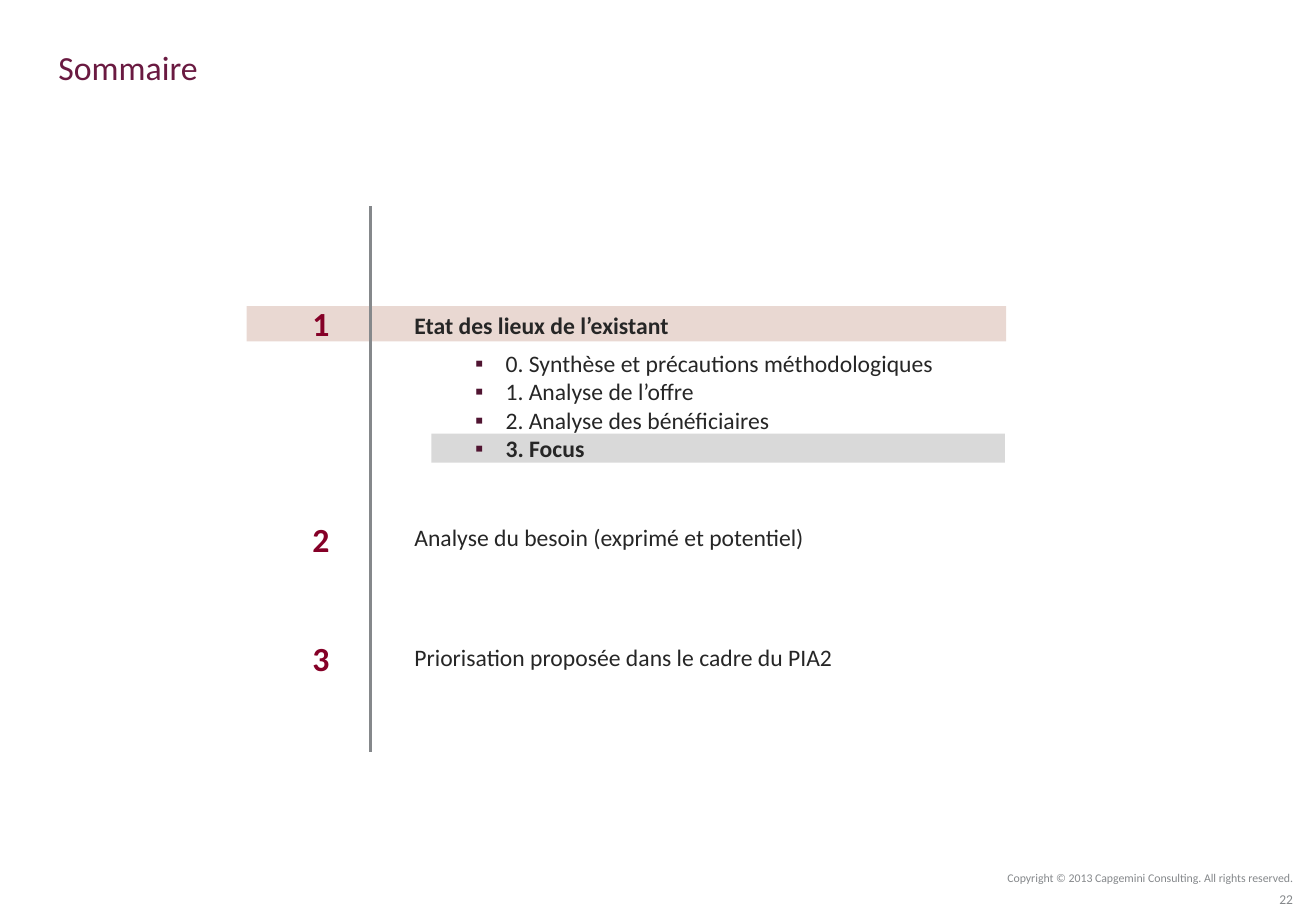
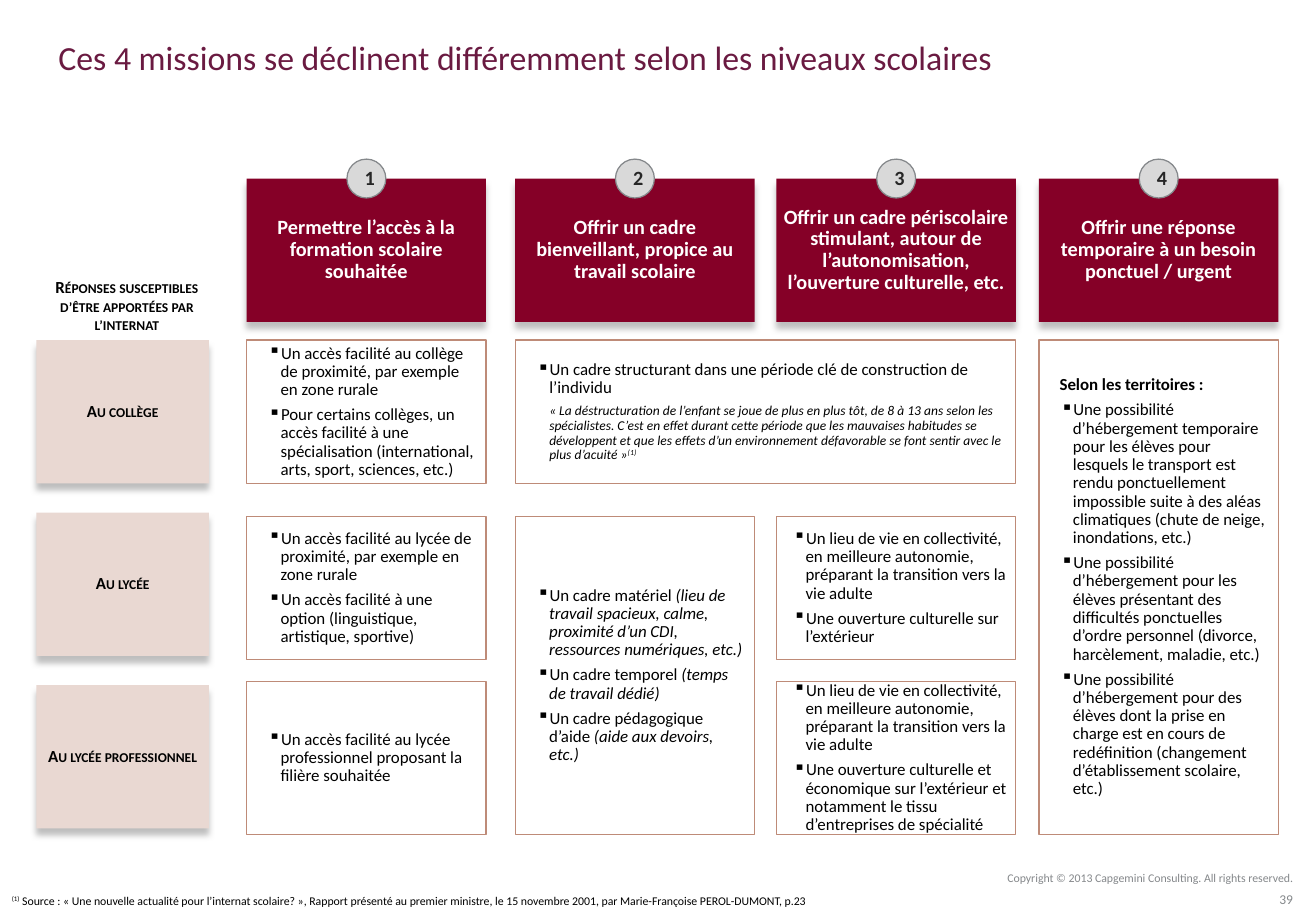
from lxml.etree import SubElement
from pptx import Presentation
from pptx.dml.color import RGBColor
from pptx.enum.shapes import MSO_CONNECTOR, MSO_SHAPE
from pptx.enum.text import MSO_ANCHOR, MSO_AUTO_SIZE, PP_ALIGN
from pptx.oxml.ns import qn
from pptx.util import Inches, Pt

FONT = "Calibri"
INK = {
    "title": "6A1A41", "wine": "850027", "plum": "501431", "rose": "E9D8D2",
    "clay": "BE8B78", "grey": "85888B", "pale": "D9D9D9", "shade": "BFBFBF",
    "dark": "262626", "black": "000000", "white": "FFFFFF",
}
SIDES = (0.1, 0.05, 0.1, 0.05)
SLIM = (0.08, 0.05, 0.08, 0.05)
TIGHT = (0.04, 0.05, 0.04, 0.05)
MID, TOP = MSO_ANCHOR.MIDDLE, MSO_ANCHOR.TOP


def tint(name):
    return RGBColor.from_string(INK[name])


def write(frame, paras, size, ink, bold=False, align=PP_ALIGN.LEFT,
          lead=0.9, gap=4, anchor=MID, sides=SIDES):
    """Fill a frame; a bar in a string switches italics on or off."""
    frame.word_wrap = True
    frame.auto_size = MSO_AUTO_SIZE.NONE
    frame.vertical_anchor = anchor
    (frame.margin_left, frame.margin_top,
     frame.margin_right, frame.margin_bottom) = map(Inches, sides)
    for i, text in enumerate(paras):
        para = frame.add_paragraph() if i else frame.paragraphs[0]
        para.alignment = align
        para.line_spacing = lead
        para.space_before = Pt(gap if i else 0)
        para.space_after = Pt(0)
        for j, part in enumerate(text.split("|")):
            run = para.add_run()
            run.text = part
            style(run, size, ink, bold, j % 2 == 1)
    return frame.paragraphs


def style(run, size, ink, bold=False, slant=False):
    font = run.font
    font.name, font.size = FONT, Pt(size)
    font.bold, font.italic = bold, slant
    font.color.rgb = tint(ink)


def indent(para, left, hang, mark=None, ink="black"):
    props = para._p.get_or_add_pPr()
    props.set("marL", str(Inches(left)))
    props.set("indent", str(Inches(hang)))
    if mark:
        hue = SubElement(props, qn("a:buClr"))
        SubElement(hue, qn("a:srgbClr"), val=INK[ink])
        SubElement(props, qn("a:buChar"), char=mark)
    else:
        SubElement(props, qn("a:buNone"))


def raise_run(run):
    run.font._element.set("baseline", "30000")


def small_caps(paras):
    for para in paras:
        for run in para.runs:
            run.font._element.set("cap", "small")


def place(shape, box):
    shape.left, shape.top, shape.width, shape.height = map(Inches, box)


def label(slide, box, text, size, ink, **opts):
    frame = slide.shapes.add_textbox(*map(Inches, box)).text_frame
    return write(frame, [text], size, ink, **opts)


def block(slide, box, fill, line=None, kind=MSO_SHAPE.RECTANGLE, shade=False):
    shape = slide.shapes.add_shape(kind, *map(Inches, box))
    shape.shadow.inherit = False
    shape.fill.solid()
    shape.fill.fore_color.rgb = tint(fill)
    if line:
        shape.line.color.rgb = tint(line)
        shape.line.width = Pt(0.75)
    else:
        shape.line.fill.background()
    if shade:
        effects = shape.element.spPr.find(qn("a:effectLst"))
        drop = SubElement(effects, qn("a:outerShdw"), blurRad=str(Pt(4)),
                          dist=str(Pt(4)), dir="5400000", algn="t", rotWithShape="0")
        SubElement(drop, qn("a:srgbClr"), val=INK["shade"])
    return shape


def start(deck, layout, title, top, number):
    """Add a slide with the shared title style and footer."""
    slide = deck.slides.add_slide(deck.slide_layouts[layout])
    place(slide.shapes.title, (0.38, top, 10.45, 0.84))
    write(slide.shapes.title.text_frame, [title], 20, "title", lead=1)
    right = {"align": PP_ALIGN.RIGHT, "lead": 1}
    label(slide, (7.57, 7.12, 3.17, 0.22),
          "Copyright © 2013 Capgemini Consulting. All rights reserved.", 7, "grey", **right)
    label(slide, (8.21, 7.34, 2.53, 0.13), number, 8, "grey", sides=(0.1, 0, 0.1, 0), **right)
    return slide


def agenda(slide, left, top):
    """Place the numbered contents list beside its vertical rule."""
    block(slide, (left + 2.31, top + 2.26, 4.72, 0.24), "pale")
    block(slide, (left + 0.79, top + 1.21, 6.25, 0.29), "rose")
    body = slide.placeholders[1]
    slide.shapes.element.append(body.element)
    place(body, (left + 1.58, top, 6.69, 4.96))
    paras = write(body.text_frame, [
        "Etat des lieux de l’existant",
        "0. Synthèse et précautions méthodologiques",
        "1. Analyse de l’offre",
        "2. Analyse des bénéficiaires",
        "3. Focus",
        "Analyse du besoin (exprimé et potentiel)",
        "Priorisation proposée dans le cadre du PIA2",
    ], 14, "dark", lead=1, gap=0, sides=(0.59, 0.55, 0.1, 0.05))
    for i, para in enumerate(paras):
        if 1 <= i <= 4:
            para.level = 1
            indent(para, 0.75, -0.25, "▪", "plum")
        else:
            indent(para, 0.25, -0.25)
            para.space_before = Pt(36 if i else 0)
            para.space_after = Pt(18 if i else 6)
        para.runs[0].font.bold = i in (0, 4)
    x = Inches(left + 1.81)
    rule = slide.shapes.add_connector(
        MSO_CONNECTOR.STRAIGHT, x, Inches(top + 0.39), x, Inches(top + 4.88))
    rule.line.color.rgb = tint("grey")
    rule.line.width = Pt(1.75)
    SubElement(rule.element.spPr, qn("a:effectLst"))
    for number, drop in zip("123", (1.17, 2.95, 3.93)):
        label(slide, (left, top + drop, 1.57, 0.4), number, 20, "wine",
              bold=True, align=PP_ALIGN.RIGHT, anchor=TOP)


COLS = (2.03, 4.24, 6.39, 8.55)
ROWS = ((2.8, 3.98), (4.25, 5.43), (5.61, 6.87))
WIDE = 1.97
HEADS = (
    "Permettre l’accès à la formation scolaire souhaitée",
    "Offrir un cadre bienveillant, propice au travail scolaire",
    "Offrir un cadre périscolaire stimulant, autour de l’autonomisation, "
    "l’ouverture culturelle, etc.",
    "Offrir une réponse temporaire à un besoin ponctuel / urgent",
)
LEVELS = ("Au collège", "Au lycée", "Au lycée professionnel")
LIFE = ("Un lieu de vie en collectivité, en meilleure autonomie, "
        "préparant la transition vers la vie adulte")
# first column, last column, first row, last row, paragraphs
CARDS = (
    (0, 0, 0, 0, [
        "Un accès facilité au collège de proximité, par exemple en zone rurale",
        "Pour certains collèges, un accès facilité à une spécialisation "
        "(international, arts, sport, sciences, etc.)"]),
    (0, 0, 1, 1, [
        "Un accès facilité au lycée de proximité, par exemple en zone rurale",
        "Un accès facilité à une option (linguistique, artistique, sportive)"]),
    (0, 0, 2, 2, [
        "Un accès facilité au lycée professionnel proposant la filière souhaitée"]),
    (1, 1, 1, 2, [
        "Un cadre matériel |(lieu de travail spacieux, calme, proximité d’un CDI, "
        "ressources numériques, etc.)",
        "Un cadre temporel |(temps de travail dédié)",
        "Un cadre pédagogique d’aide |(aide aux devoirs, etc.)"]),
    (2, 2, 1, 1, [LIFE, "Une ouverture culturelle sur l’extérieur"]),
    (2, 2, 2, 2, [
        LIFE,
        "Une ouverture culturelle et économique sur l’extérieur et notamment "
        "le tissu d’entreprises de spécialité"]),
)
QUOTE = (
    "« La déstructuration de l’enfant se joue de plus en plus tôt, de 8 à 13 ans "
    "selon les spécialistes. C’est en effet durant cette période que les mauvaises "
    "habitudes se développent et que les effets d’un environnement défavorable "
    "se font sentir avec le plus d’acuité »")
NEEDS = [
    "Selon les territoires :",
    "Une possibilité d’hébergement temporaire pour les élèves pour lesquels le "
    "transport est rendu ponctuellement impossible suite à des aléas climatiques "
    "(chute de neige, inondations, etc.)",
    "Une possibilité d’hébergement pour les élèves présentant des difficultés "
    "ponctuelles d’ordre personnel (divorce, harcèlement, maladie, etc.)",
    "Une possibilité d’hébergement pour des élèves dont la prise en charge est en "
    "cours de redéfinition (changement d’établissement scolaire, etc.)",
]


def header(slide, left, top, number, text, sides):
    head = block(slide, (left, top, WIDE, 1.18), "wine", shade=True)
    opts = {"bold": True, "align": PP_ALIGN.CENTER}
    write(head.text_frame, [text], 12, "white", sides=sides, **opts)
    size = 0.32
    disc = block(slide, (left + (WIDE - size) / 2, top - size / 2, size, size),
                 "pale", "grey", MSO_SHAPE.OVAL)
    write(disc.text_frame, [number], 12, "dark", **opts)


def levels(slide, left, top):
    """Place the row labels and the caption above them."""
    opts = {"bold": True, "align": PP_ALIGN.CENTER}
    small_caps(label(slide, (left - 0.08, top - 0.55, 1.65, 0.56),
                     "Réponses susceptibles d’être apportées par l’internat",
                     10, "black", anchor=TOP, **opts))
    for i, text in enumerate(LEVELS):
        tile = block(slide, (left, top + i * 1.42, 1.42, 1.18), "rose", shade=True)
        small_caps(write(tile.text_frame, [text], 10, "black", sides=SLIM, **opts))


def card(slide, first, last, upper, lower, texts, plain=()):
    """Place a card over a range of columns and rows; plain lists unmarked paragraphs."""
    left, top = COLS[first], ROWS[upper][0]
    box = (left, top, COLS[last] + WIDE - left, ROWS[lower][1] - top)
    sides = SLIM
    if first == 2:
        sides = (0.04, 0.05, 0, 0.05) if upper == 2 else TIGHT
    frame = block(slide, box, "white", "clay").text_frame
    paras = write(frame, texts, 10, "black", sides=sides)
    for i, para in enumerate(paras):
        if i not in plain:
            indent(para, 0.2, -0.1, "▪")
    return paras


def missions(slide):
    for i, (left, text) in enumerate(zip(COLS, HEADS)):
        header(slide, left, 1.47, str(i + 1), text, TIGHT if i == 2 else SIDES)
    levels(slide, 0.3, 2.8)
    for spot in CARDS:
        card(slide, *spot)

    quote = card(slide, 1, 2, 0, 0, [
        "Un cadre structurant dans une période clé de construction de l’individu",
        QUOTE], plain=(1,))[1]
    indent(quote, 0.2, 0)
    note = quote.add_run()
    note.text = "(1)"
    for run in quote.runs:
        style(run, 8, "black", slant=True)
    raise_run(note)

    lead = card(slide, 3, 3, 0, 2, NEEDS, plain=(0,))[0]
    indent(lead, 0.29, -0.2)
    lead.runs[0].font.bold = True


def source(slide, box):
    para = label(slide, box, "(1)", 7, "black", anchor=TOP)[0]
    raise_run(para.runs[0])
    run = para.add_run()
    run.text = (" Source : « Une nouvelle actualité pour l’internat scolaire? », "
                "Rapport présenté au premier ministre, le 15 novembre 2001, "
                "par Marie-Françoise PEROL-DUMONT, p.23")
    style(run, 7, "black")


def main():
    deck = Presentation()
    deck.slide_width, deck.slide_height = Inches(10.83), Inches(7.5)
    agenda(start(deck, 1, "Sommaire", 0.13, "22"), 1.24, 1.31)
    slide = start(deck, 5, "Ces 4 missions se déclinent différemment selon les "
                  "niveaux scolaires", 0.05, "39")
    missions(slide)
    source(slide, (0, 7.32, 10.74, 0.21))
    deck.save("out.pptx")


if __name__ == "__main__":
    main()
